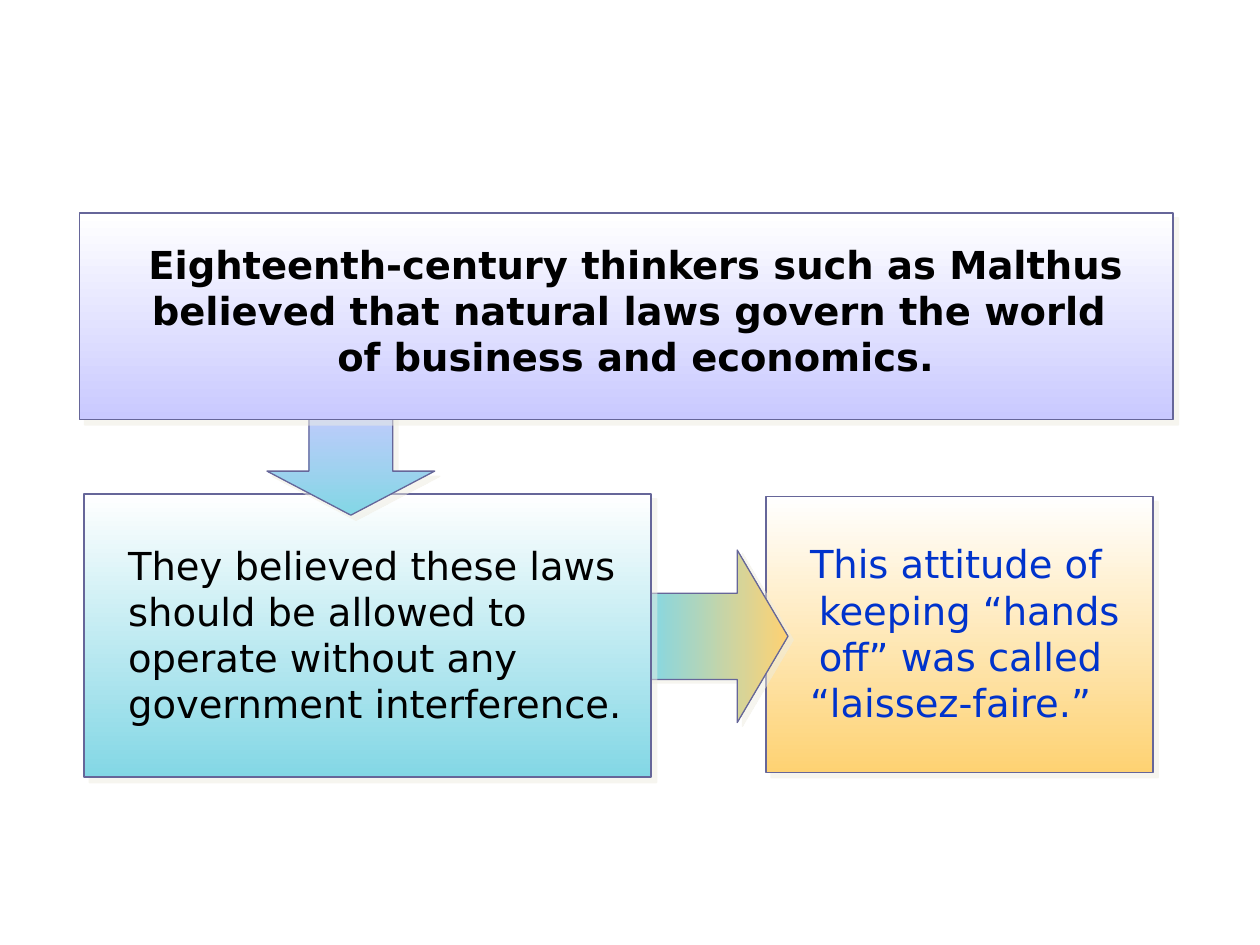
"""Build a slide on natural laws and laissez-faire economics."""
from lxml.etree import SubElement as Sub
from pptx import Presentation
from pptx.dml.color import RGBColor
from pptx.enum.shapes import MSO_SHAPE as Kind
from pptx.enum.text import MSO_ANCHOR, MSO_AUTO_SIZE as Auto, PP_ALIGN as Align
from pptx.oxml.ns import qn
from pptx.util import Pt

WHITE, LILAC, TEAL, GOLD = "FFFFFF", "C9C9FF", "83D7E5", "FED273"
BLACK, BLUE, EDGE, SHADE = "000000", "0033CC", "666699", "EEECE1"
FONT = "DejaVu Sans"

ATTITUDE = ["This attitude of keeping “hands off” was called", "“laissez-faire.”"]
BELIEF = ["They believed these laws should be allowed to operate "
          "without any government interference."]
THINKERS = ["Eighteenth-century thinkers such as Malthus believed that natural "
            "laws govern the world \nof business and economics."]

ITEMS = [
    ("box", (437.8, 283.7, 221, 157.7), (WHITE, GOLD), {}),
    ("text", (455.8, 305.3, 218.9, 114.5), ATTITUDE, {"color": BLUE, "hang": 5}),
    ("arrow", (360.7, 323.3, 98.6, 80.6), (TEAL, GOLD),
     {"head": 0.36, "turn": 270, "dist": 3.6, "way": 34}),
    ("box", (48.2, 282.2, 324, 162), (WHITE, TEAL), {}),
    ("text", (66.2, 306, 300.2, 114.5), BELIEF, {}),
    ("arrow", (152.6, 228.2, 95.8, 66.2), (LILAC, TEAL), {"head": 0.38}),
    ("box", (45.4, 121.7, 625, 118.1), (WHITE, LILAC), {}),
    ("text", (66.2, 133.9, 594, 87.8), THINKERS, {"bold": True, "align": Align.CENTER}),
]


def rgb(code):
    return RGBColor.from_string(code)


def shade(shape, dist, way):
    shape.shadow.inherit = False
    glow = Sub(shape._element.spPr.find(qn("a:effectLst")), qn("a:outerShdw"),
               dist=str(Pt(dist)), dir=str(way * 60000), algn="ctr", rotWithShape="0")
    tone = Sub(glow, qn("a:srgbClr"), val=SHADE)
    Sub(tone, qn("a:alpha"), val="50000")


def draw(slide, kind, spot, tones, width=1, turn=0, dist=4.2, way=45):
    shape = slide.shapes.add_shape(kind, *map(Pt, spot))
    shape.rotation = turn
    shape.fill.gradient()
    shape.fill.gradient_angle = 270
    for stop, tone in zip(shape.fill.gradient_stops, tones):
        stop.color.rgb = rgb(tone)
    shape.line.color.rgb = rgb(EDGE)
    shape.line.width = Pt(width)
    shade(shape, dist, way)
    return shape


def box(slide, spot, tones):
    draw(slide, Kind.RECTANGLE, spot, tones)


def arrow(slide, spot, tones, head, **look):
    shape = draw(slide, Kind.DOWN_ARROW, spot, tones, width=0.75, **look)
    shape.adjustments[0] = 0.5
    shape.adjustments[1] = head


def text(slide, spot, lines, color=BLACK, size=22, bold=False, align=Align.LEFT, hang=0):
    frame = slide.shapes.add_textbox(*map(Pt, spot)).text_frame
    frame.word_wrap = True
    frame.auto_size = Auto.SHAPE_TO_FIT_TEXT
    frame.vertical_anchor = MSO_ANCHOR.TOP
    frame.text = "\n".join(line.replace("\n", "\v") for line in lines)
    for para in frame.paragraphs:
        para.alignment = align
        if hang:
            props = para._p.get_or_add_pPr()
            props.set("marL", str(Pt(hang)))
            props.set("indent", str(-Pt(hang)))
        for run in para.runs:
            font = run.font
            font.name, font.size, font.bold = FONT, Pt(size), bold
            font.color.rgb = rgb(color)


def main():
    deck = Presentation()
    deck.slide_width, deck.slide_height = Pt(720), Pt(540)
    slide = deck.slides.add_slide(deck.slide_layouts[6])
    makers = {"box": box, "arrow": arrow, "text": text}
    for kind, spot, body, look in ITEMS:
        makers[kind](slide, spot, body, **look)
    deck.save("out.pptx")


if __name__ == "__main__":
    main()
